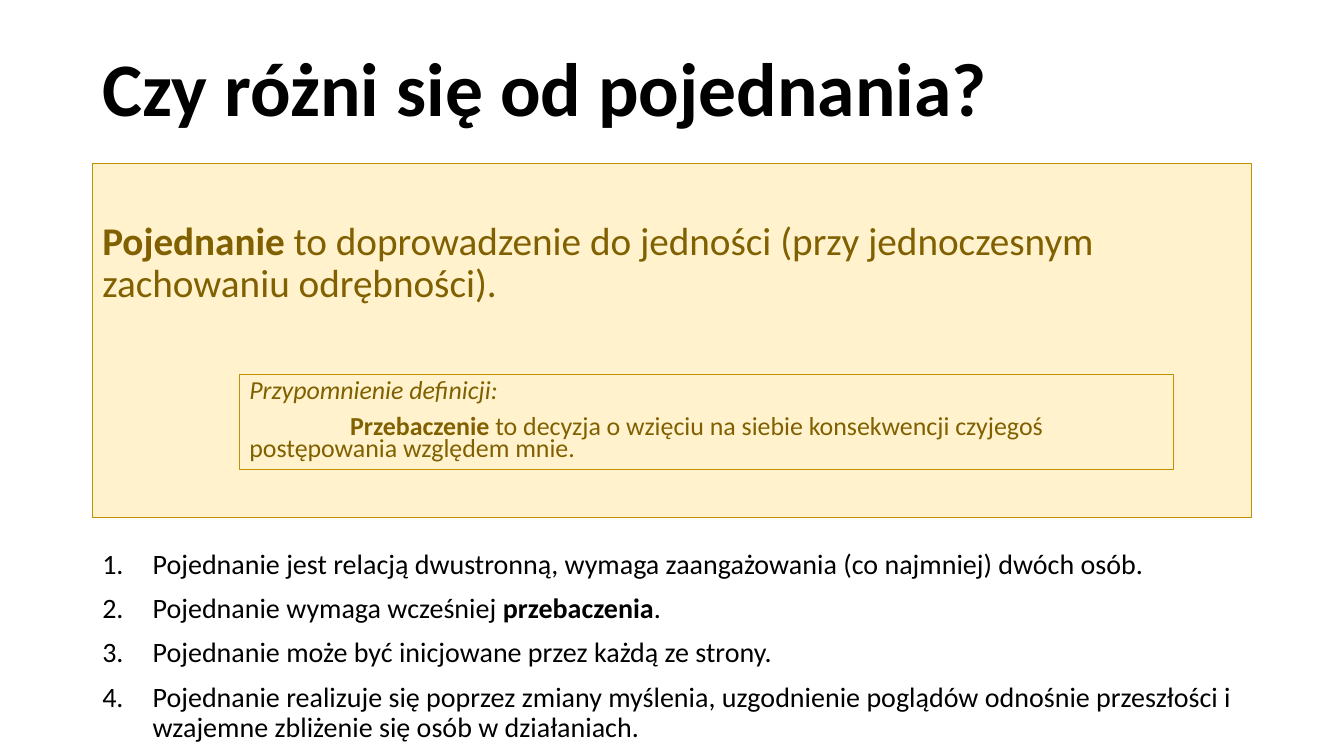
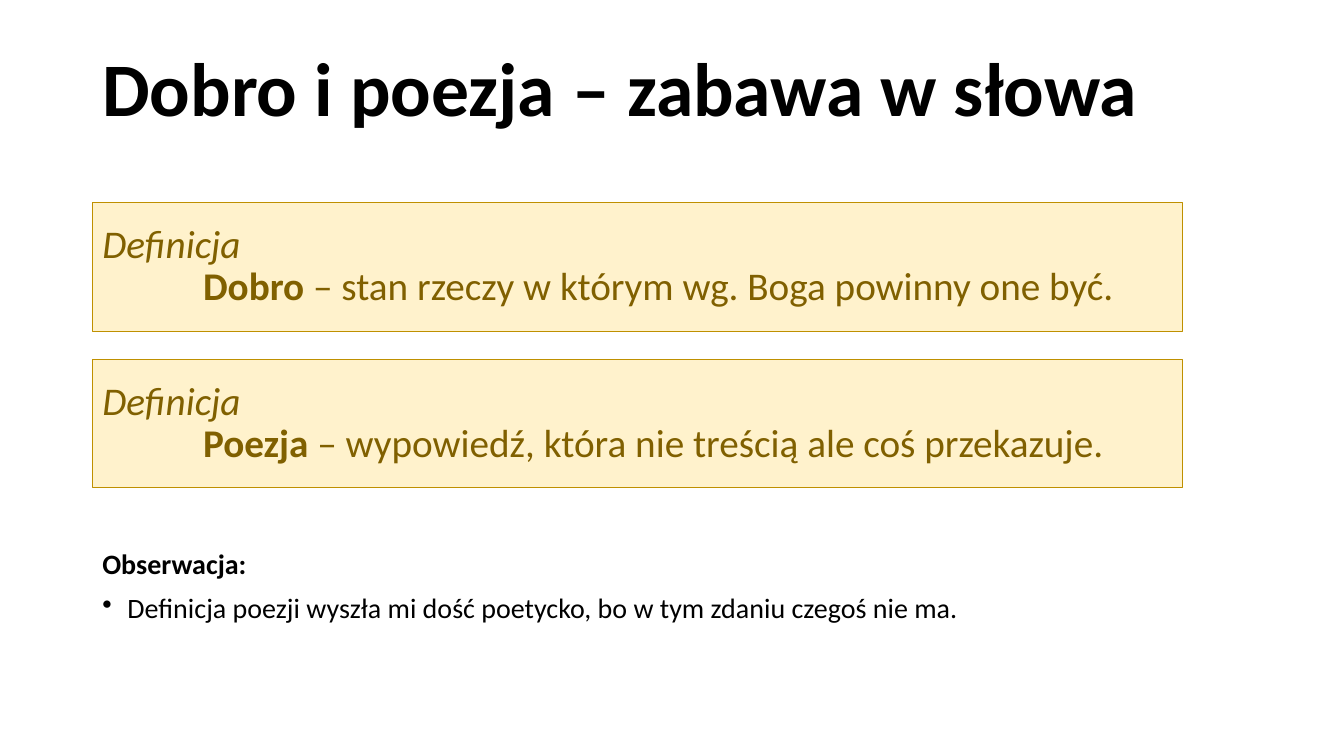
import pptx
import pptx.util
import pptx.dml.color
import pptx.enum.shapes
import pptx.enum.text
import pptx.oxml.ns
import lxml.etree

Pt = pptx.util.Pt
ANCHOR = pptx.enum.text.MSO_ANCHOR

FONT = "Calibri"
BLACK, BROWN, CREAM, GOLD = "000000", "806000", "FFF2CC", "BF9000"
LEFT, WIDTH = 66, 828
TITLE_TOP, TITLE_HEIGHT = 28.8, 74.2
BODY_TOP = 389.5
FIRST_LINE = 72

# A paragraph is a list of (text, style) runs; style is "", "b" or "i".
RECONCILIATION_TITLE = "Czy różni się od pojednania?"
RECONCILIATION = [
    ("Pojednanie", "b"),
    (" to doprowadzenie do jedności (przy jednoczesnym zachowaniu odrębności).", ""),
]
REMINDER = [("Przypomnienie definicji:", "i")]
FORGIVENESS = [
    ("Przebaczenie", "b"),
    (" to decyzja o wzięciu na siebie konsekwencji czyjegoś postępowania względem mnie.", ""),
]
THESES = [
    [("Pojednanie jest relacją dwustronną, wymaga zaangażowania (co najmniej) dwóch osób.", "")],
    [("Pojednanie wymaga wcześniej ", ""), ("przebaczenia", "b"), (".", "")],
    [("Pojednanie może być inicjowane przez każdą ze strony.", "")],
    [("Pojednanie realizuje się poprzez zmiany myślenia, uzgodnienie poglądów odnośnie "
      "przeszłości i wzajemne zbliżenie się osób w działaniach.", "")],
]

POETRY_TITLE = "Dobro i poezja – zabawa w słowa"
DEFINITION_LABEL = [("Definicja", "i")]
DEFINITIONS = [
    [("Dobro", "b"), (" – stan rzeczy w którym wg. Boga powinny one być.", "")],
    [("Poezja", "b"), (" – wypowiedź, która nie treścią ale coś przekazuje.", "")],
]
OBSERVATION_LABEL = [("Obserwacja:", "b")]
OBSERVATION = [("Definicja poezji wyszła mi dość poetycko, bo w tym zdaniu czegoś nie ma.", "")]


def color(hex_value):
    return pptx.dml.color.RGBColor.from_string(hex_value)


def set_indent(paragraph, first_line, margin=0):
    properties = paragraph._p.get_or_add_pPr()
    properties.set("marL", str(Pt(margin)))
    properties.set("indent", str(Pt(first_line)))
    return properties


def set_bullet(paragraph, tag, hang, **attributes):
    """Add a hanging a:buChar or a:buAutoNum; call before other formatting."""
    properties = set_indent(paragraph, -hang, hang)
    lxml.etree.SubElement(properties, pptx.oxml.ns.qn(tag), attributes)


def number(paragraph):
    set_bullet(paragraph, "a:buAutoNum", 36, type="arabicPeriod")


def dot(paragraph):
    set_bullet(paragraph, "a:buChar", 18, char="•")


def indent_first_line(paragraph):
    set_indent(paragraph, FIRST_LINE)


def write(shape, items, size, text_color, anchor, before=10, spacing=0.9):
    """Fill a shape with (runs, paragraph formatter or None) items."""
    frame = shape.text_frame
    frame.word_wrap = True
    frame.vertical_anchor = anchor
    for position, (runs, formatter) in enumerate(items):
        paragraph = frame.add_paragraph() if position else frame.paragraphs[0]
        if formatter:
            formatter(paragraph)
        paragraph.alignment = pptx.enum.text.PP_ALIGN.LEFT
        paragraph.line_spacing = spacing
        paragraph.space_before = Pt(before)
        font = paragraph.font
        font.name, font.size = FONT, Pt(size)
        font.color.rgb = color(text_color)
        for text, style in runs:
            run = paragraph.add_run()
            run.text = text
            # Runs in a preset shape take the shape's font colour unless told otherwise.
            run.font.color.rgb = color(text_color)
            if style:
                run.font.bold = style == "b"
                run.font.italic = style == "i"


def add_text(slide, top, height, items, size, anchor=ANCHOR.TOP, **spacing):
    box = slide.shapes.add_textbox(Pt(LEFT), Pt(top), Pt(WIDTH), Pt(height))
    write(box, items, size, BLACK, anchor, **spacing)


def add_panel(slide, left, top, width, height, items, size, anchor=ANCHOR.MIDDLE, **spacing):
    panel = slide.shapes.add_shape(
        pptx.enum.shapes.MSO_SHAPE.RECTANGLE, Pt(left), Pt(top), Pt(width), Pt(height))
    panel.shadow.inherit = False
    panel.fill.solid()
    panel.fill.fore_color.rgb = color(CREAM)
    panel.line.color.rgb = color(GOLD)
    panel.line.width = Pt(0.75)
    write(panel, items, size, BROWN, anchor, **spacing)
    return panel


def add_titled_slide(presentation, title):
    slide = presentation.slides.add_slide(presentation.slide_layouts[6])
    add_text(slide, TITLE_TOP, TITLE_HEIGHT, [([(title, "b")], None)], 54,
             ANCHOR.MIDDLE, before=0)
    return slide


def build_reconciliation(presentation):
    slide = add_titled_slide(presentation, RECONCILIATION_TITLE)
    panel = add_panel(slide, LEFT, 117, WIDTH, 253, [(RECONCILIATION, None)], 28,
                      ANCHOR.TOP, before=0)
    panel.text_frame.margin_top = Pt(41)
    add_text(slide, BODY_TOP, 124, [(thesis, number) for thesis in THESES], 20)
    add_panel(slide, 171, 267.5, 667.5, 68,
              [(REMINDER, None), (FORGIVENESS, indent_first_line)], 18.5, spacing=0.7)


def build_poetry(presentation):
    slide = add_titled_slide(presentation, POETRY_TITLE)
    top, height, gap = 144.5, 92, 20
    for position, definition in enumerate(DEFINITIONS):
        add_panel(slide, LEFT, top + position * (height + gap), 778.5, height,
                  [(DEFINITION_LABEL, None), (definition, indent_first_line)], 28, before=0)
    add_text(slide, BODY_TOP, 96.5, [(OBSERVATION_LABEL, None), (OBSERVATION, dot)], 20)


def main():
    presentation = pptx.Presentation()
    presentation.slide_width, presentation.slide_height = Pt(960), Pt(540)
    build_reconciliation(presentation)
    build_poetry(presentation)
    presentation.save("out.pptx")


if __name__ == "__main__":
    main()
